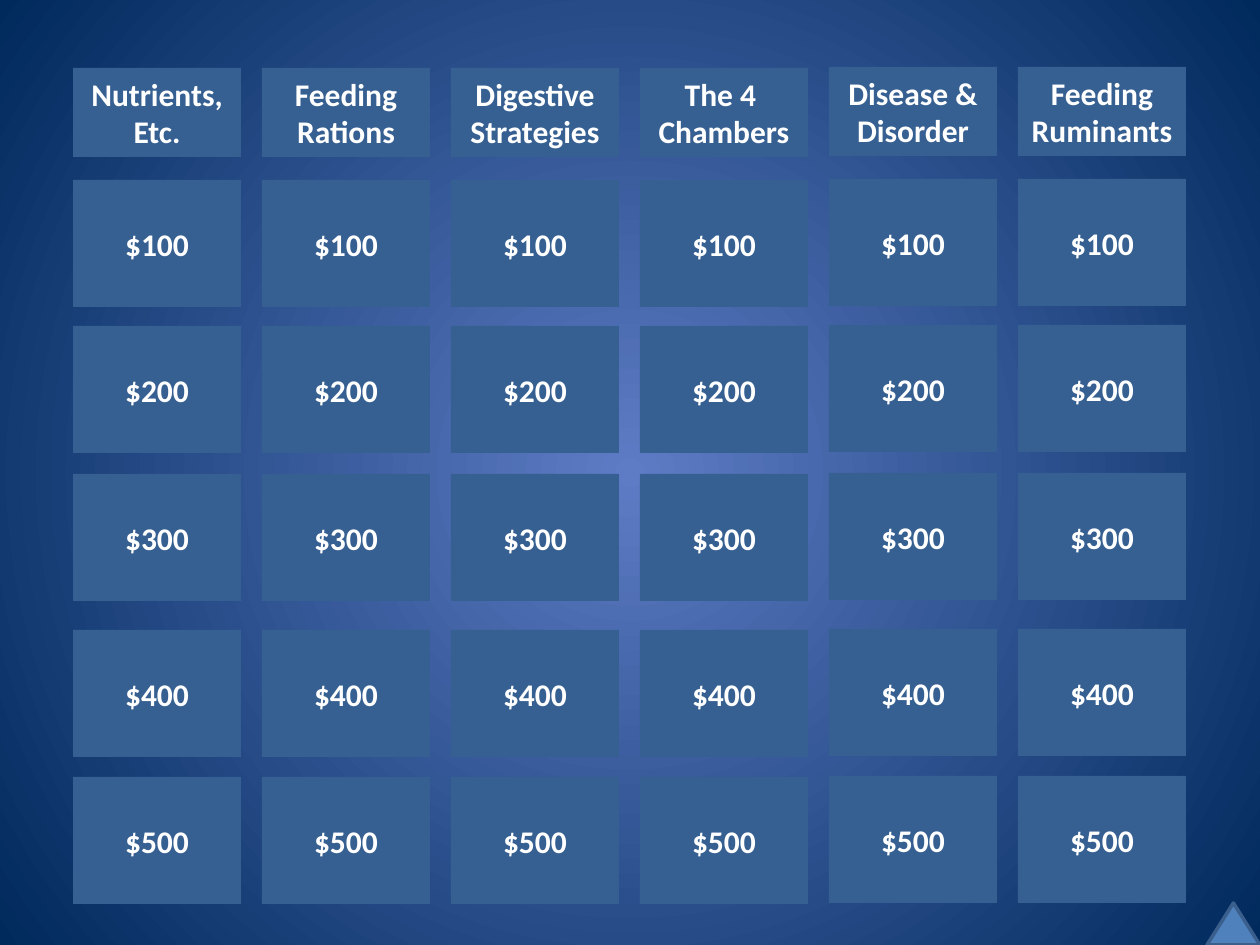
import pptx
import pptx.dml.color
import pptx.enum.shapes
import pptx.enum.text
import pptx.oxml
import pptx.oxml.ns
import pptx.util

PX = pptx.util.Inches(1) // 126
SHAPES = pptx.enum.shapes.MSO_SHAPE
COLORS = {
    "glow": "5E7CC5",
    "edge": "00295C",
    "tile": "376092",
    "text": "FFFFFF",
    "marker": "4F81BD",
    "marker_line": "3A5F8C",
}
CATEGORIES = [
    "Nutrients, Etc.",
    "Feeding Rations",
    "Digestive\nStrategies",
    "The 4 \nChambers",
    "Disease & Disorder",
    "Feeding Ruminants",
]
PRICE_TOPS = {"$100": 180, "$200": 326, "$300": 474, "$400": 630, "$500": 777}
LEFT, COLUMN_STEP, TILE_WIDTH = 73, 189, 168
HEADER_TOP, HEADER_HEIGHT, PRICE_HEIGHT = 68, 89, 127
RAISED_FROM = 4  # the last two columns sit one pixel higher


def rgb(name):
    return pptx.dml.color.RGBColor.from_string(COLORS[name])


def set_radial_background(page):
    """Fill the background with a circular gradient around the centre."""
    fill = page.background.fill
    fill.gradient()
    for stop, name in zip(fill.gradient_stops, ("glow", "edge")):
        stop.color.rgb = rgb(name)
    linear = page.element.xpath(".//p:bg//a:lin")[0]
    circle = pptx.oxml.parse_xml(
        f'<a:path {pptx.oxml.ns.nsdecls("a")} path="circle">'
        '<a:fillToRect l="50000" t="50000" r="50000" b="50000"/></a:path>'
    )
    linear.getparent().replace(linear, circle)


def add_filled_shape(page, kind, left, top, width, height, color):
    shape = page.shapes.add_shape(
        kind, left * PX, top * PX, width * PX, height * PX
    )
    shape.shadow.inherit = False
    shape.fill.solid()
    shape.fill.fore_color.rgb = rgb(color)
    return shape


def add_tile(page, column, top, height, text):
    if column >= RAISED_FROM:
        top -= 1
    left = LEFT + column * COLUMN_STEP
    tile = add_filled_shape(
        page, SHAPES.RECTANGLE, left, top, TILE_WIDTH, height, "tile"
    )
    tile.line.fill.background()
    frame = tile.text_frame
    frame.word_wrap = True
    frame.vertical_anchor = pptx.enum.text.MSO_ANCHOR.MIDDLE
    para = frame.paragraphs[0]
    para.text = text
    para.alignment = pptx.enum.text.PP_ALIGN.CENTER
    para.font.name = "Calibri"
    para.font.size = pptx.util.Pt(18)
    para.font.bold = True
    para.font.color.rgb = rgb("text")


def add_corner_marker(page):
    marker = add_filled_shape(
        page, SHAPES.ISOSCELES_TRIANGLE, 1207, 903, 53, 42, "marker"
    )
    marker.line.color.rgb = rgb("marker_line")
    marker.line.width = pptx.util.Pt(2)


def main():
    deck = pptx.Presentation()
    deck.slide_width = 1260 * PX
    deck.slide_height = 945 * PX
    page = deck.slides.add_slide(deck.slide_layouts[6])
    set_radial_background(page)
    for price, top in PRICE_TOPS.items():
        for column in range(len(CATEGORIES)):
            add_tile(page, column, top, PRICE_HEIGHT, price)
    for column, category in enumerate(CATEGORIES):
        add_tile(page, column, HEADER_TOP, HEADER_HEIGHT, category)
    add_corner_marker(page)
    deck.save("out.pptx")


if __name__ == "__main__":
    main()
